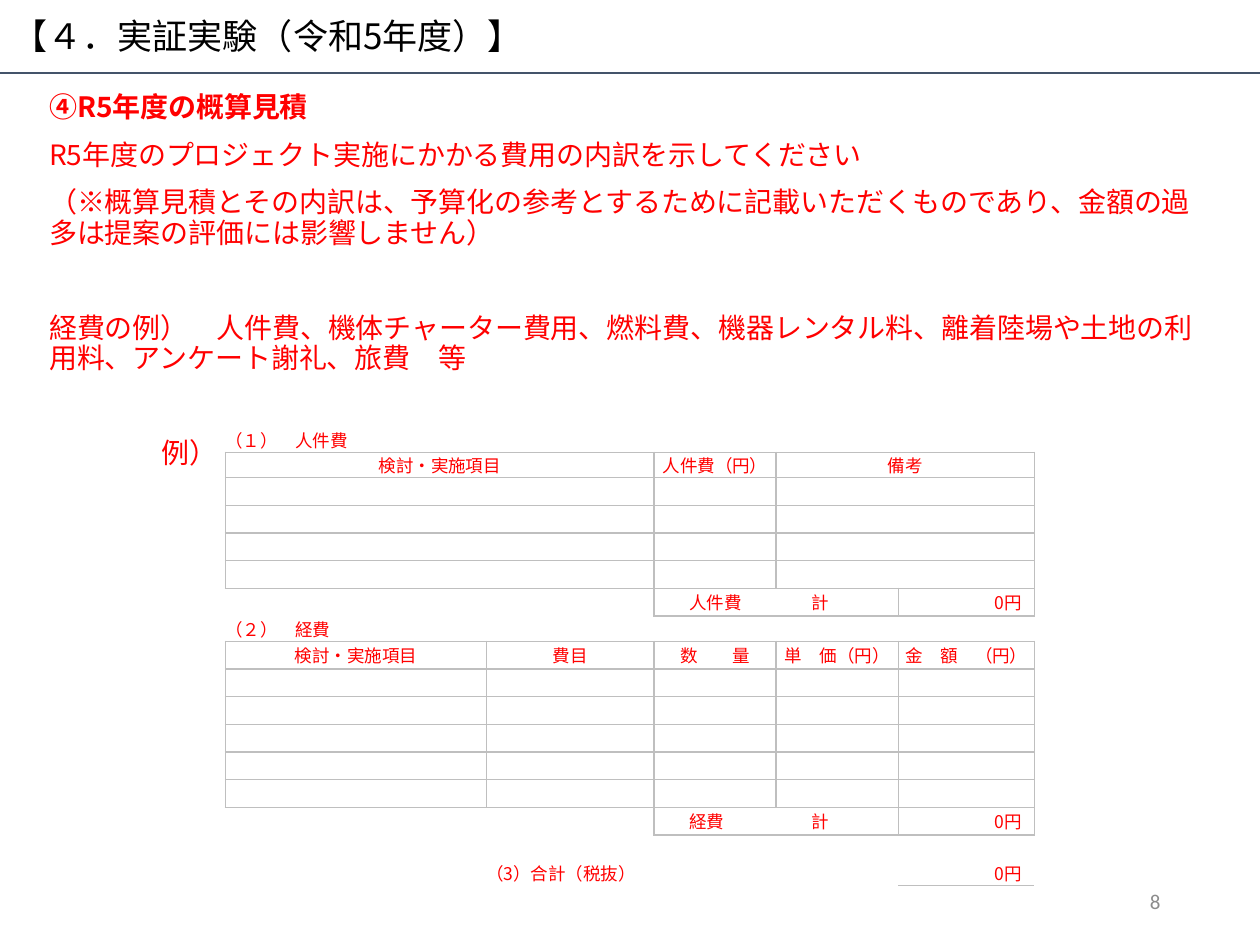
from dataclasses import dataclass

from lxml import etree
from pptx import Presentation
from pptx.dml.color import RGBColor
from pptx.enum.shapes import MSO_CONNECTOR
from pptx.enum.text import MSO_ANCHOR, MSO_AUTO_SIZE, PP_ALIGN
from pptx.oxml.ns import qn
from pptx.util import Inches, Pt

LEFT, CENTER, RIGHT = PP_ALIGN.LEFT, PP_ALIGN.CENTER, PP_ALIGN.RIGHT
TOP, MIDDLE = MSO_ANCHOR.TOP, MSO_ANCHOR.MIDDLE
NO_AUTOFIT = MSO_AUTO_SIZE.NONE
STRAIGHT = MSO_CONNECTOR.STRAIGHT


@dataclass(frozen=True)
class Theme:
    black: str = "000000"
    red: str = "FF0000"
    navy: str = "44546A"
    gray: str = "8C8C8C"
    grid: str = "BFBFBF"
    white: str = "FFFFFF"
    japanese: str = "Noto Sans CJK JP"
    latin: str = "Calibri"
    title_size: int = 20
    body_size: int = 16
    number_size: int = 12
    table_size: int = 10


@dataclass(frozen=True)
class Passage:
    text: str
    before: float = 10
    bold: bool = False
    indent: float = 0


@dataclass(frozen=True)
class Entry:
    start: int
    end: int
    text: str = ""
    align: PP_ALIGN = CENTER
    left: float = 0
    right: float = 0
    tab: float = 0


@dataclass(frozen=True)
class Row:
    entries: tuple[Entry, ...]
    height: float = 0.22
    ruled: bool = True


THEME = Theme()
COLUMNS = (2.07, 1.33, 0.97, 0.97, 0.55, 0.53)
PERSONNEL = (0, 2, 3)
EXPENSES = (0, 1, 2, 3, 4)
AFTER_GAP = 37

PASSAGES = (
    Passage("④R5年度の概算見積", bold=True),
    Passage("R5年度のプロジェクト実施にかかる費用の内訳を示してください"),
    Passage("（※概算見積とその内訳は、予算化の参考とするために記載いただくものであり、"
            "金額の過多は提案の評価には影響しません）"),
    Passage("経費の例）　人件費、機体チャーター費用、燃料費、機器レンタル料、"
            "離着陸場や土地の利用料、アンケート謝礼、旅費　等", AFTER_GAP),
    Passage("例）", AFTER_GAP, indent=0.89),
)


def split_row(starts: tuple[int, ...], texts: tuple[str, ...] = (), height: float = 0.22) -> Row:
    ends = starts[1:] + (len(COLUMNS),)
    labels = texts or ("",) * len(starts)
    return Row(tuple(Entry(*part) for part in zip(starts, ends, labels)), height)


def amount() -> Entry:
    return Entry(4, 6, "0円", RIGHT, right=0.1)


def subtotal(label: str) -> Row:
    return Row((Entry(2, 4, f"{label}\t計", LEFT, left=0.28, tab=0.97), amount()))


def heading(text: str) -> Row:
    return Row((Entry(0, 1, text, LEFT),), 0.2, False)


ROWS = (
    heading("（１）　人件費"),
    split_row(PERSONNEL, ("検討・実施項目", "人件費（円）", "備考"), 0.2),
    *[split_row(PERSONNEL)] * 4,
    subtotal("人件費"),
    heading("（２）　経費"),
    split_row(EXPENSES, ("検討・実施項目", "費目", "数　　量", "単　価（円）", "金　額　（円）")),
    *[split_row(EXPENSES)] * 5,
    subtotal("経費"),
    Row((), 0.2, False),
    Row((Entry(1, 2, "（3）合計（税抜）", LEFT), amount()), 0.2, False),
)


def write(paragraph, text: str, size: int, color: str, font: str, bold: bool = False) -> None:
    run = paragraph.add_run()
    run.text = text
    run.font.size = Pt(size)
    run.font.bold = bold
    run.font.color.rgb = RGBColor.from_string(color)
    run.font.name = font
    etree.SubElement(run.font._element, qn("a:ea"), typeface=font)


def place(shape, left: float, top: float, width: float, height: float, anchor: MSO_ANCHOR):
    shape.left, shape.top = Inches(left), Inches(top)
    shape.width, shape.height = Inches(width), Inches(height)
    frame = shape.text_frame
    frame.word_wrap = True
    frame.auto_size = NO_AUTOFIT
    frame.vertical_anchor = anchor
    return frame


def fill_body(frame) -> None:
    for index, passage in enumerate(PASSAGES):
        paragraph = frame.add_paragraph() if index else frame.paragraphs[0]
        paragraph.line_spacing = 0.9
        paragraph.space_before = Pt(passage.before)
        properties = paragraph._p.get_or_add_pPr()
        properties.set("marL", str(Inches(passage.indent)))
        properties.set("indent", "0")
        etree.SubElement(properties, qn("a:buNone"))
        write(paragraph, passage.text, THEME.body_size, THEME.red, THEME.japanese, passage.bold)


def is_ruled(row: int, column: int) -> bool:
    if not (0 <= row < len(ROWS) and 0 <= column < len(COLUMNS)):
        return False
    return ROWS[row].ruled and column >= ROWS[row].entries[0].start


def style_cell(cell, row: int, column: int) -> None:
    cell.margin_left = cell.margin_right = cell.margin_top = cell.margin_bottom = 0
    cell.vertical_anchor = MIDDLE
    total_rule = row == len(ROWS) - 1 and column >= 4
    neighbors = {"lnL": (row, column - 1), "lnR": (row, column + 1),
                 "lnT": (row - 1, column), "lnB": (row + 1, column)}
    properties = cell._tc.get_or_add_tcPr()
    for side, neighbor in neighbors.items():
        drawn = is_ruled(row, column) or is_ruled(*neighbor) or (total_rule and side == "lnB")
        line = etree.SubElement(properties, qn(f"a:{side}"), w=str(Pt(1)))
        if drawn:
            paint = etree.SubElement(line, qn("a:solidFill"))
            etree.SubElement(paint, qn("a:srgbClr"), val=THEME.grid)
        else:
            etree.SubElement(line, qn("a:noFill"))
    if 2 <= row <= 5 and column >= 3:
        cell.fill.solid()
        cell.fill.fore_color.rgb = RGBColor.from_string(THEME.white)
    else:
        cell.fill.background()


def fill_entry(table, row: int, entry: Entry) -> None:
    cell = table.cell(row, entry.start)
    if entry.end - entry.start > 1:
        cell.merge(table.cell(row, entry.end - 1))
    if not entry.text:
        return
    cell.margin_left, cell.margin_right = Inches(entry.left), Inches(entry.right)
    paragraph = cell.text_frame.paragraphs[0]
    paragraph.alignment = entry.align
    if entry.tab:
        stops = etree.SubElement(paragraph._p.get_or_add_pPr(), qn("a:tabLst"))
        etree.SubElement(stops, qn("a:tab"), pos=str(Inches(entry.tab)), algn="l")
    write(paragraph, entry.text, THEME.table_size, THEME.red, THEME.japanese)


def add_estimate(slide) -> None:
    heights = [row.height for row in ROWS]
    table = slide.shapes.add_table(len(ROWS), len(COLUMNS), Inches(1.79), Inches(3.39),
                                   Inches(sum(COLUMNS)), Inches(sum(heights))).table
    table.first_row = table.horz_banding = False
    for column, width in zip(table.columns, COLUMNS):
        column.width = Inches(width)
    for index, row in enumerate(ROWS):
        table.rows[index].height = Inches(row.height)
        for column in range(len(COLUMNS)):
            style_cell(table.cell(index, column), index, column)
        for entry in row.entries:
            fill_entry(table, index, entry)
        for column in range(len(COLUMNS)):
            paragraph = table.cell(index, column).text_frame.paragraphs[0]
            if not paragraph.runs:
                etree.SubElement(paragraph._p, qn("a:endParaRPr"), sz=str(THEME.table_size * 100))


def main() -> None:
    deck = Presentation()
    deck.slide_width, deck.slide_height = Inches(10), Inches(7.5)
    slide = deck.slides.add_slide(deck.slide_layouts[1])
    title = place(slide.shapes.title, 0, 0, 10, 0.61, MIDDLE).paragraphs[0]
    title.alignment, title.line_spacing = LEFT, 0.9
    write(title, "【４．実証実験（令和5年度）】", THEME.title_size, THEME.black, THEME.japanese)
    fill_body(place(slide.placeholders[1], 0.29, 0.69, 9.44, 5.8, TOP))
    rule = slide.shapes.add_connector(STRAIGHT, 0, Inches(0.58), Inches(10), Inches(0.58))
    rule.line.color.rgb = RGBColor.from_string(THEME.navy)
    rule.line.width = Pt(1.5)
    etree.SubElement(rule._element.spPr, qn("a:effectLst"))
    page = place(slide.shapes.add_textbox(0, 0, 0, 0), 7.06, 6.95, 2.25, 0.4, MIDDLE).paragraphs[0]
    page.alignment = RIGHT
    write(page, "8", THEME.number_size, THEME.gray, THEME.latin)
    add_estimate(slide)
    deck.save("out.pptx")


if __name__ == "__main__":
    main()
